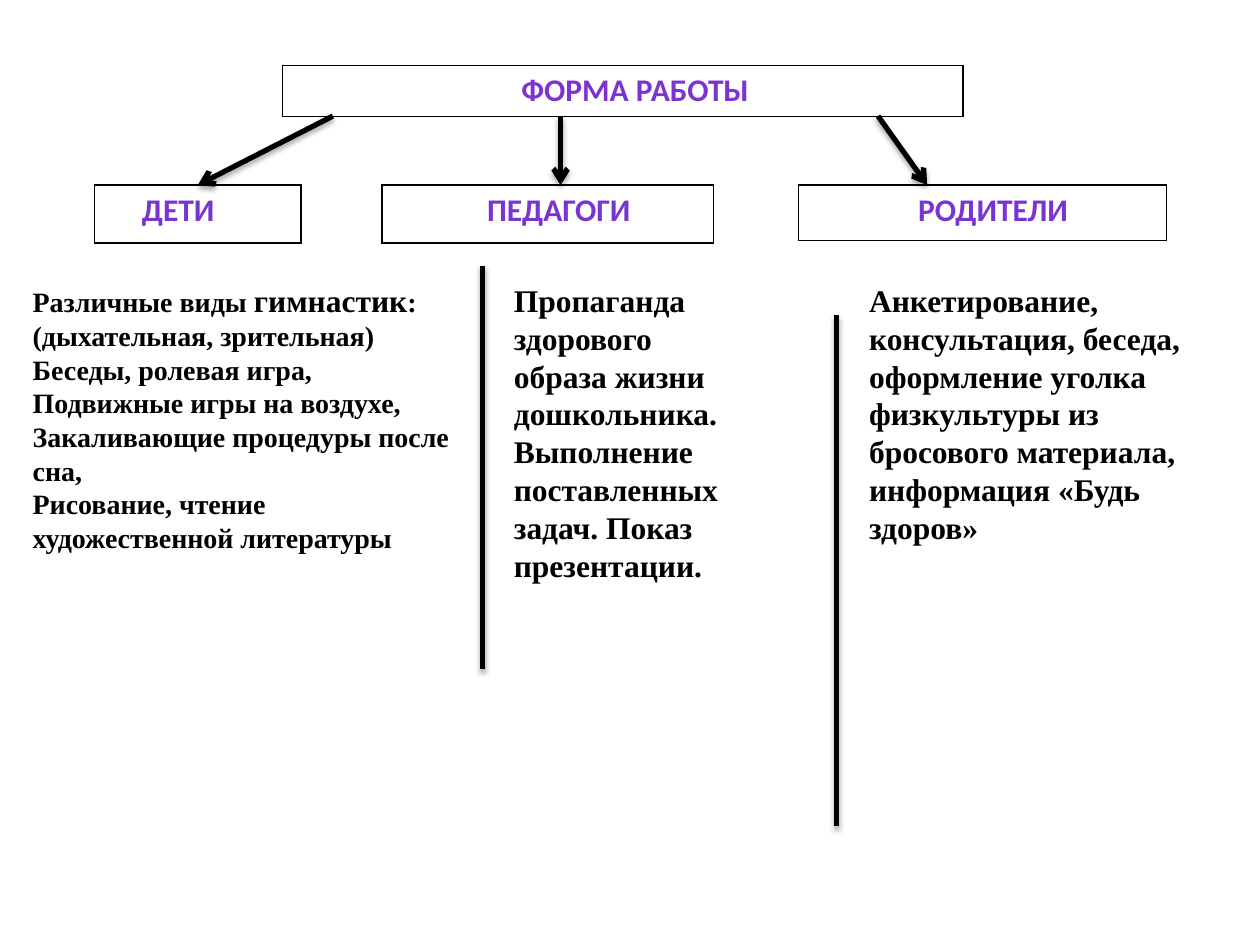
import pptx
import pptx.dml.color
import pptx.enum.shapes
import pptx.enum.text
import pptx.oxml
import pptx.oxml.ns
import pptx.util
from pptx.util import Cm, Pt

COLORS = {"heading": "7B34D2", "ink": "000000"}
HEADING_FONT, BODY_FONT = "Calibri", "Times New Roman"

# Content; all lengths in centimetres
# heading, left, top, width, height, text indent
HEADINGS = [
    ("ФОРМА РАБОТЫ", 5.69, 1.32, 13.72, 1.02, 4.82),
    ("ДЕТИ", 1.9, 3.73, 4.17, 1.17, 0.96),
    ("ПЕДАГОГИ", 7.7, 3.73, 6.68, 1.17, 2.12),
    ("РОДИТЕЛИ", 16.1, 3.73, 7.42, 1.12, 2.41),
]
# left, width, height, paragraphs made of (text, size) runs
COLUMNS = [
    (0.41, 8.94, 5.82, [
        [("Различные виды ", 16), ("гимнастик", 18), (": (дыхательная, зрительная)", 16)],
        [("Беседы, ролевая игра,", 16)],
        [("Подвижные игры на воздухе,", 16)],
        [("Закаливающие процедуры после сна,", 16)],
        [("Рисование, чтение художественной литературы", 16)],
    ]),
    (10.11, 4.78, 6.4, [
        [("Пропаганда здорового образа жизни дошкольника. Выполнение "
          "поставленных задач. Показ презентации.", 18)],
    ]),
    (17.27, 7.8, 5.64, [
        [("Анкетирование,", 18)],
        [("консультация, беседа, оформление уголка физкультуры из "
          "бросового материала, информация «Будь здоров»", 18)],
    ]),
]
COLUMN_TOP = 5.54
ARROW_TOP, ARROW_BOTTOM = 2.34, 3.73
ARROWS = [(6.71, 3.99), (11.3, 11.3), (17.7, 18.69)]  # start x, end x
DIVIDERS = [(9.73, 5.36, 13.49), (16.87, 6.35, 16.66)]  # x, top, bottom

NS = pptx.oxml.ns.nsdecls("a")
SHADOW = (f'<a:effectLst {NS}><a:outerShdw blurRad="{Pt(3.1)}" dist="{Pt(1.8)}" '
          'dir="5400000" rotWithShape="0"><a:srgbClr val="000000">'
          '<a:alpha val="35000"/></a:srgbClr></a:outerShdw></a:effectLst>')


def style(font, name, color):
    font.name = name
    font.bold = True
    font.color.rgb = pptx.dml.color.RGBColor.from_string(COLORS[color])


def add_heading(slide, text, left, top, width, height, indent):
    table = slide.shapes.add_table(1, 1, Cm(left), Cm(top), Cm(width), Cm(height)).table
    table.first_row = table.horz_banding = False
    cell = table.cell(0, 0)
    cell.margin_left = Cm(indent)
    cell.text = text
    paragraph = cell.text_frame.paragraphs[0]
    paragraph.font.size = Pt(18)
    style(paragraph.font, HEADING_FONT, "heading")
    cell.fill.background()
    properties = cell._tc.get_or_add_tcPr()
    for position, side in enumerate("LRTB"):
        properties.insert(position, pptx.oxml.parse_xml(
            f'<a:ln{side} {NS} w="{Pt(1)}"><a:solidFill><a:srgbClr val="{COLORS["ink"]}"/>'
            f'</a:solidFill></a:ln{side}>'))


def add_line(slide, x1, y1, x2, y2, arrow=False):
    line = slide.shapes.add_connector(
        pptx.enum.shapes.MSO_CONNECTOR.STRAIGHT, Cm(x1), Cm(y1), Cm(x2), Cm(y2))
    line.line.width = Pt(3)
    line.line.color.rgb = pptx.dml.color.RGBColor.from_string(COLORS["ink"])
    if arrow:
        line.line._get_or_add_ln().append(
            pptx.oxml.parse_xml(f'<a:tailEnd {NS} type="arrow"/>'))
    line._element.spPr.append(pptx.oxml.parse_xml(SHADOW))


def add_column(slide, left, width, height, paragraphs):
    frame = slide.shapes.add_textbox(
        Cm(left), Cm(COLUMN_TOP), Cm(width), Cm(height)).text_frame
    frame.word_wrap = True
    frame.auto_size = pptx.enum.text.MSO_AUTO_SIZE.SHAPE_TO_FIT_TEXT
    for number, runs in enumerate(paragraphs):
        paragraph = frame.add_paragraph() if number else frame.paragraphs[0]
        style(paragraph.font, BODY_FONT, "ink")
        for text, size in runs:
            run = paragraph.add_run()
            run.text = text
            run.font.size = Pt(size)


def main():
    deck = pptx.Presentation()
    deck.slide_width, deck.slide_height = Cm(25.4), Cm(19.05)
    slide = deck.slides.add_slide(deck.slide_layouts[6])

    # Heading boxes and the arrows between them
    for heading in HEADINGS:
        add_heading(slide, *heading)
    for start, end in ARROWS:
        add_line(slide, start, ARROW_TOP, end, ARROW_BOTTOM, arrow=True)

    # Text columns and their dividers
    for x, top, bottom in DIVIDERS:
        add_line(slide, x, top, x, bottom)
    for column in COLUMNS:
        add_column(slide, *column)

    deck.save("out.pptx")


if __name__ == "__main__":
    main()
